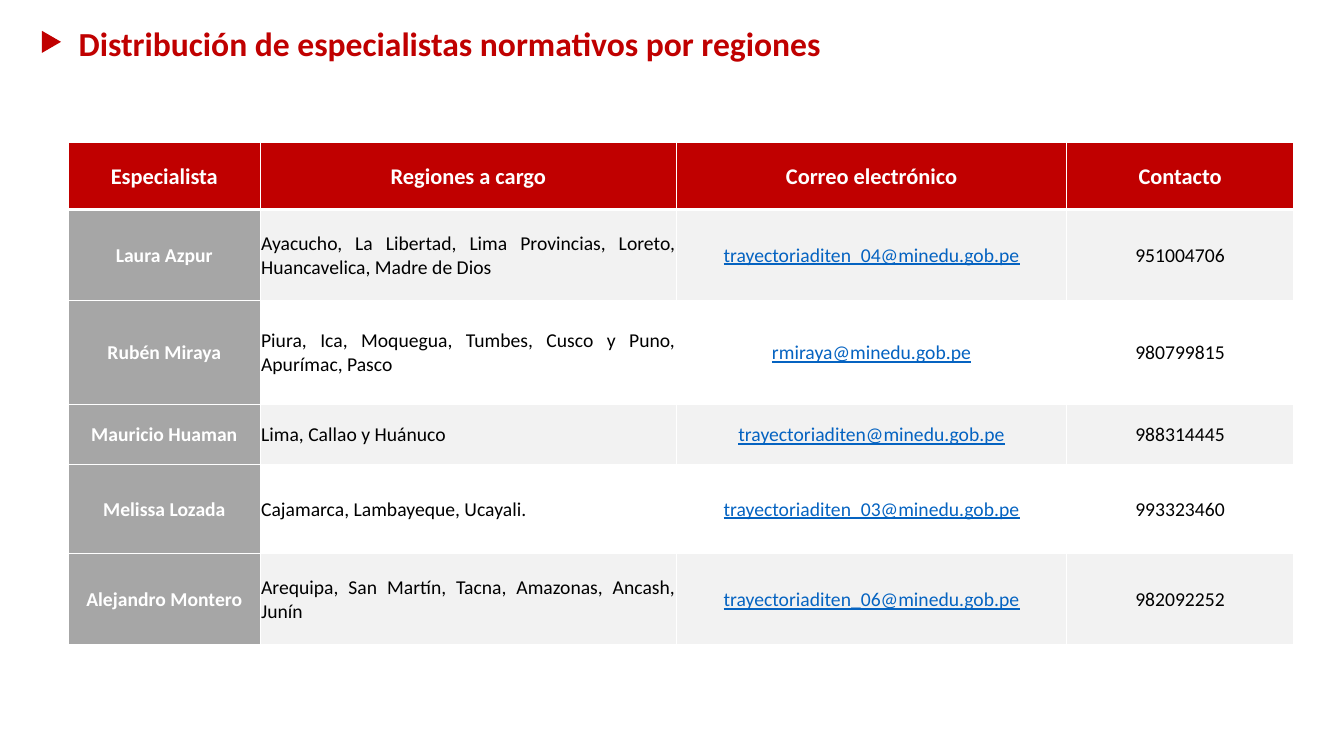
from lxml import etree
from pptx import Presentation
from pptx import util as u
from pptx.dml.color import RGBColor
from pptx.enum import shapes, text
from pptx.oxml.ns import qn

RED, GRAY, LIGHT, WHITE, BLACK, LINK = "C00000", "A6A6A6", "F2F2F2", "FFFFFF", "000000", "0563C1"
CENTER, JUSTIFY = text.PP_ALIGN.CENTER, text.PP_ALIGN.JUSTIFY

HEADERS = ["Especialista", "Regiones a cargo", "Correo electrónico", "Contacto"]
SPECIALISTS = [
    ["Laura Azpur", "Ayacucho, La Libertad, Lima Provincias, Loreto, Huancavelica, Madre de Dios",
     "trayectoriaditen_04@minedu.gob.pe", "951004706"],
    ["Rubén Miraya", "Piura, Ica, Moquegua, Tumbes, Cusco y Puno, Apurímac, Pasco",
     "rmiraya@minedu.gob.pe", "980799815"],
    ["Mauricio Huaman", "Lima, Callao y Huánuco",
     "trayectoriaditen@minedu.gob.pe", "988314445"],
    ["Melissa Lozada", "Cajamarca, Lambayeque, Ucayali.",
     "trayectoriaditen_03@minedu.gob.pe", "993323460"],
    ["Alejandro Montero", "Arequipa, San Martín, Tacna, Amazonas, Ancash, Junín",
     "trayectoriaditen_06@minedu.gob.pe", "982092252"],
]
COLUMN_WIDTHS = [1.9, 4.13, 3.87, 2.25]
ROW_HEIGHTS = [0.67, 0.9, 1.03, 0.6, 0.88, 0.91]


def color(value):
    return RGBColor.from_string(value)


class SlideBuilder:
    font = "Calibri"

    def __init__(self, slide):
        self.slide = slide

    def fill_text(self, frame, content, size, ink, align, bold=False, underline=False):
        frame.text = content
        paragraph = frame.paragraphs[0]
        paragraph.alignment = align
        for run in paragraph.runs:
            run.font.name = self.font
            run.font.size = u.Pt(size)
            run.font.bold = bold
            run.font.underline = underline
            run.font.color.rgb = color(ink)

    def title(self, content, left, top, width, height):
        shape = self.slide.shapes.title
        shape.left, shape.top = u.Inches(left), u.Inches(top)
        shape.width, shape.height = u.Inches(width), u.Inches(height)
        frame = shape.text_frame
        frame.word_wrap = True
        frame.auto_size = text.MSO_AUTO_SIZE.NONE
        frame.vertical_anchor = text.MSO_ANCHOR.TOP
        self.fill_text(frame, content, 24, RED, JUSTIFY, bold=True)
        frame.paragraphs[0].line_spacing = 1.0
        frame.paragraphs[0].space_before = u.Pt(0)

    def marker(self, left, top, width, height):
        shape = self.slide.shapes.add_shape(
            shapes.MSO_SHAPE.ISOSCELES_TRIANGLE,
            u.Inches(left), u.Inches(top), u.Inches(width), u.Inches(height))
        shape.rotation = 90
        shape.shadow.inherit = False
        shape.fill.solid()
        shape.fill.fore_color.rgb = color(RED)
        shape.line.fill.background()

    def borders(self, cell, bottom):
        properties = cell._tc.get_or_add_tcPr()
        widths = {"a:lnL": 1, "a:lnR": 1, "a:lnT": 1, "a:lnB": bottom}
        for position, (tag, width) in enumerate(widths.items()):
            line = etree.Element(qn(tag), w=str(u.Pt(width)))
            fill = etree.SubElement(line, qn("a:solidFill"))
            etree.SubElement(fill, qn("a:srgbClr"), val=WHITE)
            properties.insert(position, line)

    def cell(self, cell, content, fill, bottom=1, **style):
        cell.fill.solid()
        cell.fill.fore_color.rgb = color(fill)
        cell.vertical_anchor = text.MSO_ANCHOR.MIDDLE
        cell.margin_left = cell.margin_right = cell.margin_top = u.Inches(0.01)
        cell.margin_bottom = 0
        self.fill_text(cell.text_frame, content, **style)
        self.borders(cell, bottom)

    def table(self, left, top):
        table = self.slide.shapes.add_table(
            len(ROW_HEIGHTS), len(COLUMN_WIDTHS), u.Inches(left), u.Inches(top),
            u.Inches(sum(COLUMN_WIDTHS)), u.Inches(sum(ROW_HEIGHTS))).table
        for column, width in zip(table.columns, COLUMN_WIDTHS):
            column.width = u.Inches(width)
        for row, height in zip(table.rows, ROW_HEIGHTS):
            row.height = u.Inches(height)
        for index, header in enumerate(HEADERS):
            self.cell(table.cell(0, index), header, RED, bottom=3,
                      size=16, ink=WHITE, align=CENTER, bold=True)
        styles = [
            dict(ink=WHITE, align=CENTER, bold=True),
            dict(ink=BLACK, align=JUSTIFY),
            dict(ink=LINK, align=CENTER, underline=True),
            dict(ink=BLACK, align=CENTER),
        ]
        for row, specialist in enumerate(SPECIALISTS, start=1):
            band = LIGHT if row % 2 else WHITE
            for column, (content, style) in enumerate(zip(specialist, styles)):
                fill = band if column else GRAY
                self.cell(table.cell(row, column), content, fill, size=14, **style)


def main():
    presentation = Presentation()
    presentation.slide_width = u.Inches(13.33)
    presentation.slide_height = u.Inches(7.5)
    builder = SlideBuilder(presentation.slides.add_slide(presentation.slide_layouts[5]))
    builder.title("Distribución de especialistas normativos por regiones", 0.68, 0.18, 9.19, 0.91)
    builder.marker(0.4, 0.32, 0.22, 0.19)
    builder.table(0.68, 1.41)
    presentation.save("out.pptx")


if __name__ == "__main__":
    main()
